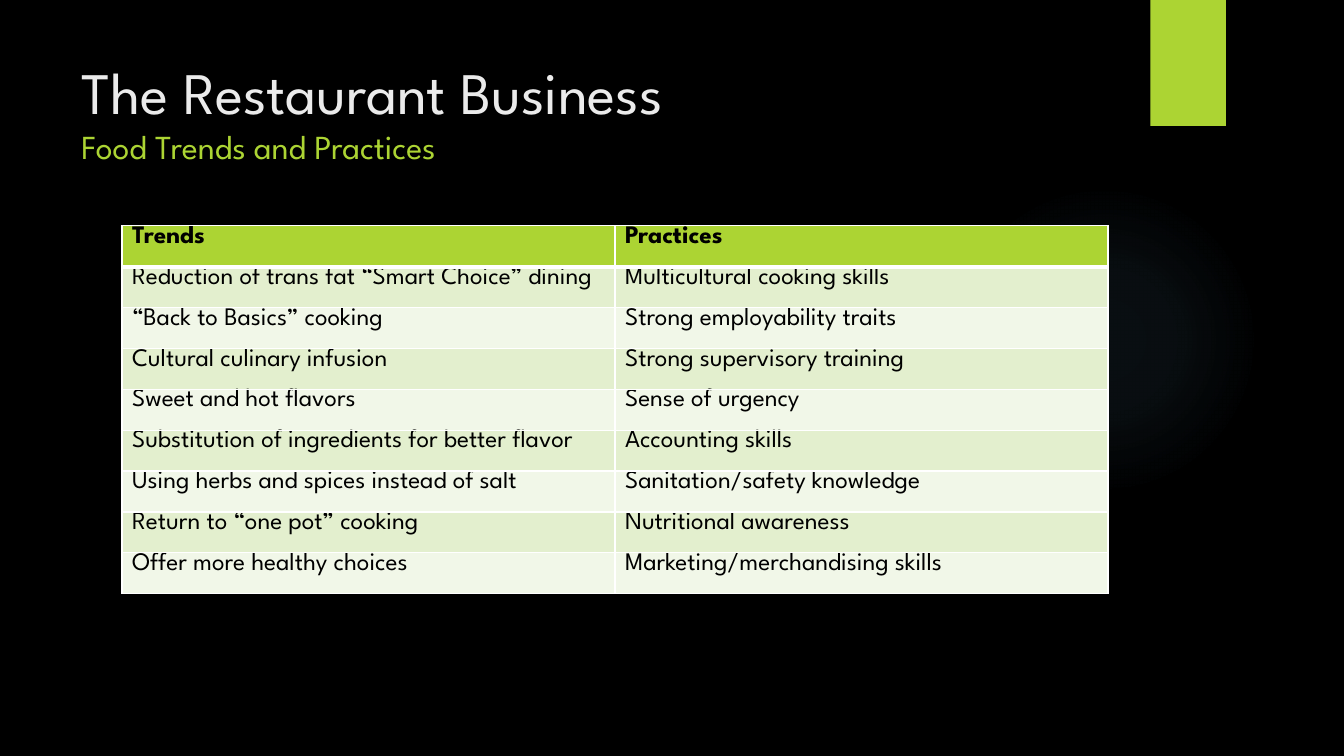
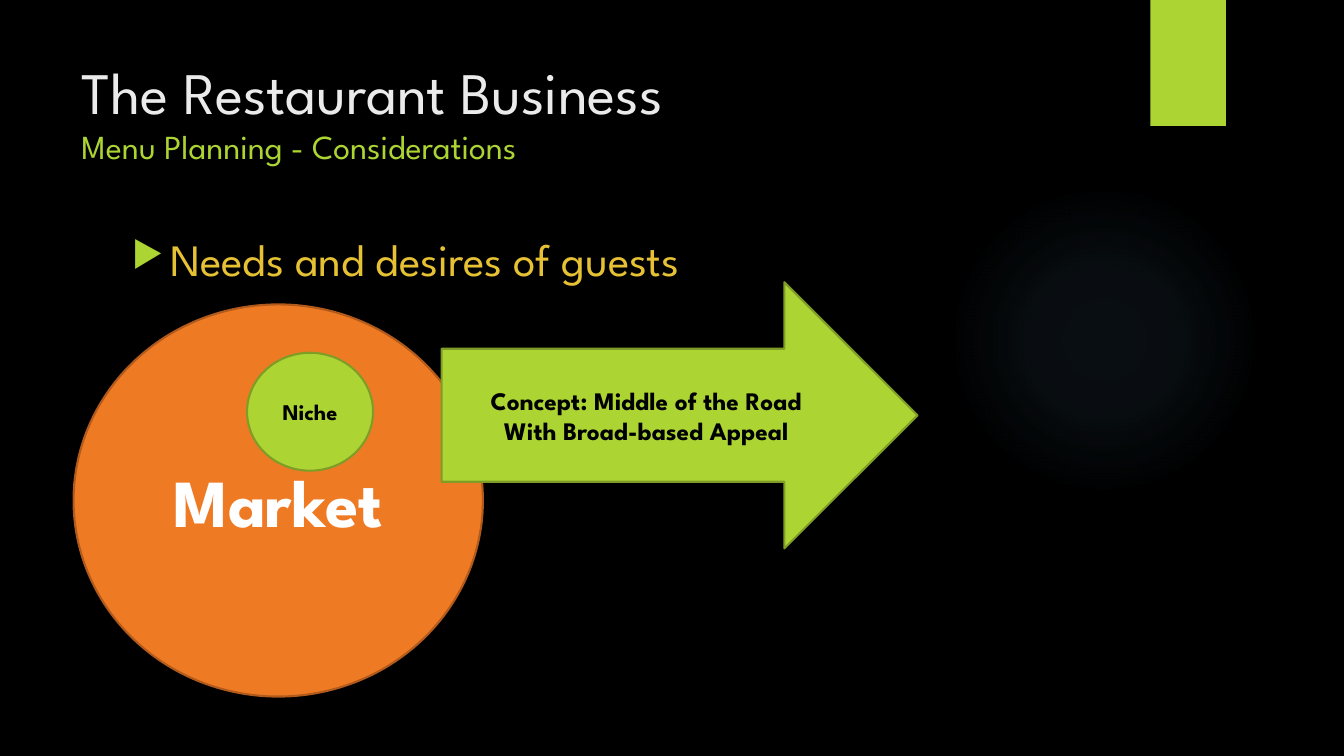
from lxml import etree
from pptx import Presentation
from pptx.dml.color import RGBColor
from pptx.enum.shapes import MSO_SHAPE
from pptx.enum.text import MSO_ANCHOR, PP_ALIGN
from pptx.oxml import parse_xml
from pptx.oxml.ns import nsdecls, qn
from pptx.util import Inches, Pt

FONT = "League Spartan"
BLACK, WHITE, TITLE = "000000", "FFFFFF", "EBEBEB"
LIME, LIME_EDGE = "ACD433", "7F9D26"
ORANGE, ORANGE_EDGE = "EF7A24", "B15A1B"
GOLD, GLOW = "E6C133", "7AC4F0"
ROW_FILLS = ("E3EFCE", "F1F7E8")


def rgb(value):
    return RGBColor.from_string(value)


def add_text(p, text, size=18, color=BLACK, bold=False, align=None):
    if align is not None:
        p.alignment = align
    r = p.add_run()
    r.text = text
    r.font.name = FONT
    r.font.size = Pt(size)
    r.font.bold = bold
    r.font.color.rgb = rgb(color)


class Deck:
    """Holds the shared style and the current slide."""

    def __init__(self):
        self.prs = Presentation()
        self.prs.slide_width = Inches(13.33)
        self.prs.slide_height = Inches(7.5)

    def slide(self, subtitle):
        self.s = self.prs.slides.add_slide(self.prs.slide_layouts[6])
        self.s.background.fill.solid()
        self.s.background.fill.fore_color.rgb = rgb(BLACK)
        self.glow(9.41, 1.83, 3.08)
        self.shape(MSO_SHAPE.RECTANGLE, 11.41, 0, 0.75, 1.25, LIME)
        p = self.textbox(0.71, 0.5, 10.29, 1.53)
        add_text(p, "The Restaurant Business", size=42, color=TITLE)
        p.add_line_break()
        add_text(p, subtitle, size=24, color=LIME)

    def shape(self, kind, x, y, w, h, fill, line=None, lines=(), **fmt):
        sp = self.s.shapes.add_shape(kind, Inches(x), Inches(y), Inches(w), Inches(h))
        sp.shadow.inherit = False
        sp.fill.solid()
        sp.fill.fore_color.rgb = rgb(fill)
        if line:
            sp.line.color.rgb = rgb(line)
            sp.line.width = Pt(1.5)
        else:
            sp.line.fill.background()
        tf = sp.text_frame
        tf.vertical_anchor = MSO_ANCHOR.MIDDLE
        for i, text in enumerate(lines):
            p = tf.add_paragraph() if i else tf.paragraphs[0]
            add_text(p, text, bold=True, align=PP_ALIGN.CENTER, **fmt)
        return sp

    def glow(self, x, y, size):
        sp = self.shape(MSO_SHAPE.OVAL, x, y, size, size, GLOW)
        stops = "".join(
            f'<a:gs pos="{pos}000"><a:srgbClr val="{GLOW}">'
            f'<a:alpha val="{alpha}000"/></a:srgbClr></a:gs>'
            for pos, alpha in ((0, 7), (36, 6), (69, 0), (100, 0)))
        grad = parse_xml(
            f'<a:gradFill {nsdecls("a")}><a:gsLst>{stops}</a:gsLst><a:path path="circle">'
            '<a:fillToRect l="50000" t="50000" r="50000" b="50000"/></a:path></a:gradFill>')
        pr = sp.element.spPr
        pr.replace(pr.find(qn("a:solidFill")), grad)

    def textbox(self, x, y, w, h):
        tf = self.s.shapes.add_textbox(Inches(x), Inches(y), Inches(w), Inches(h)).text_frame
        tf.word_wrap = True
        return tf.paragraphs[0]

    def bullet(self, text, x, y, w, h):
        p = self.textbox(x, y, w, h)
        pr = p._p.get_or_add_pPr()
        pr.set("marL", str(Inches(0.38)))
        pr.set("indent", str(-Inches(0.38)))
        color = etree.SubElement(pr, qn("a:buClr"))
        etree.SubElement(color, qn("a:srgbClr"), val=LIME)
        etree.SubElement(pr, qn("a:buSzPct"), val="80000")
        etree.SubElement(pr, qn("a:buChar"), char="▶")
        add_text(p, text, size=32, color=GOLD)

    def table(self, rows, x, y, w, h):
        frame = self.s.shapes.add_table(
            len(rows), len(rows[0]), Inches(x), Inches(y), Inches(w), Inches(h))
        for i, row in enumerate(rows):
            fill = ROW_FILLS[(i - 1) % 2] if i else LIME
            for j, text in enumerate(row):
                self.cell(frame.table.cell(i, j), text, fill, i)

    def cell(self, cell, text, fill, row):
        widths = {"L": 1, "R": 1, "T": 3 if row == 1 else 1, "B": 1 if row else 3}
        pr = cell._tc.get_or_add_tcPr()
        for side, width in widths.items():
            ln = etree.SubElement(pr, qn(f"a:ln{side}"), w=str(Pt(width)))
            solid = etree.SubElement(ln, qn("a:solidFill"))
            etree.SubElement(solid, qn("a:srgbClr"), val=WHITE)
        cell.fill.solid()
        cell.fill.fore_color.rgb = rgb(fill)
        cell.margin_top = cell.margin_bottom = 0
        add_text(cell.text_frame.paragraphs[0], text, bold=row == 0)


def main():
    deck = Deck()
    deck.slide("Food Trends and Practices")
    deck.table([
        ("Trends", "Practices"),
        ("Reduction of trans fat “Smart Choice” dining", "Multicultural cooking skills"),
        ("“Back to Basics” cooking", "Strong employability traits"),
        ("Cultural culinary infusion", "Strong supervisory training"),
        ("Sweet and hot flavors", "Sense of urgency"),
        ("Substitution of ingredients for better flavor", "Accounting skills"),
        ("Using herbs and spices instead of salt", "Sanitation/safety knowledge"),
        ("Return to “one pot” cooking", "Nutritional awareness"),
        ("Offer more healthy choices", "Marketing/merchandising skills"),
    ], 1.21, 2.24, 9.78, 3.65)

    deck.slide("Menu Planning - Considerations")
    deck.bullet("Needs and desires of guests", 1.21, 2.25, 9.78, 4.59)
    deck.shape(MSO_SHAPE.OVAL, 0.73, 3.02, 4.06, 3.89, ORANGE, ORANGE_EDGE,
               ["Market"], size=48, color=WHITE)
    deck.shape(MSO_SHAPE.OVAL, 2.45, 3.5, 1.25, 1.17, LIME, LIME_EDGE, ["Niche"], size=16)
    deck.shape(MSO_SHAPE.RIGHT_ARROW, 4.38, 2.8, 4.72, 2.64, LIME, LIME_EDGE,
               ["Concept: Middle of the Road", "With Broad-based Appeal"])
    deck.prs.save("out.pptx")


if __name__ == "__main__":
    main()
